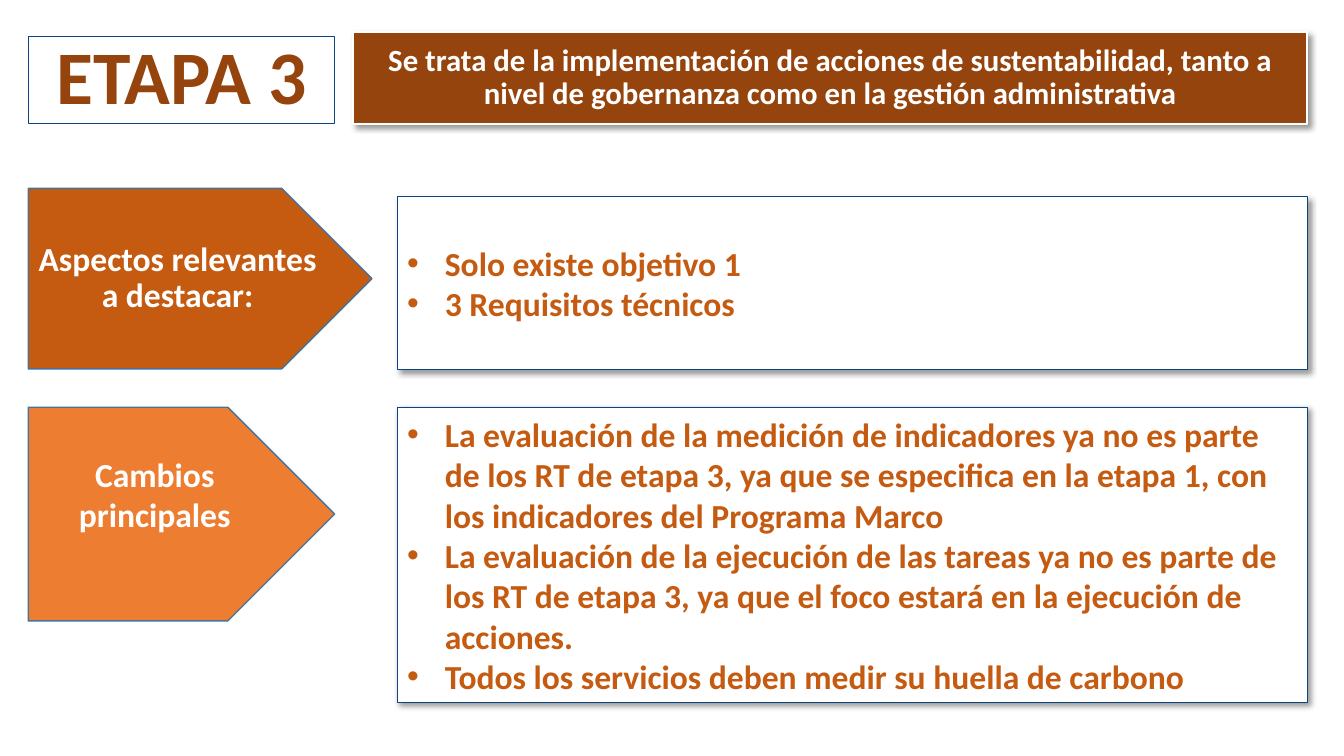
from lxml.etree import SubElement
from pptx import Presentation
from pptx.dml.color import RGBColor
from pptx.enum.shapes import MSO_SHAPE
from pptx.enum.text import MSO_ANCHOR, MSO_AUTO_SIZE, PP_ALIGN
from pptx.oxml.ns import qn
from pptx.util import Pt

WHITE = RGBColor(0xFF, 0xFF, 0xFF)
BROWN = RGBColor(0x95, 0x44, 0x0D)
RUST = RGBColor(0xC5, 0x5A, 0x11)
ORANGE = RGBColor(0xED, 0x7D, 0x31)
NAVY = RGBColor(0x0B, 0x45, 0x81)
STEEL = RGBColor(0x43, 0x73, 0x9E)

LEFT = 20.2
PANEL_LEFT, PANEL_WIDTH = 283.7, 650.2
INSETS = (7.2, 3.6, 7.2, 3.6)


class StageSlide:
    """Holds the text style and the slide, and draws each kind of element."""

    def __init__(self, prs):
        self.slide = prs.slides.add_slide(prs.slide_layouts[5])
        self.font = {"name": "Calibri", "bold": True}

    def decorate(self, s, fill, line, width, shadow=False):
        s.fill.solid()
        s.fill.fore_color.rgb = fill
        s.line.color.rgb = line
        s.line.width = Pt(width)
        s.shadow.inherit = False
        if shadow:
            effects = s._element.spPr.find(qn("a:effectLst"))
            outer = SubElement(effects, qn("a:outerShdw"), blurRad=str(Pt(4)),
                               dist=str(Pt(3)), dir="2700000", algn="tl", rotWithShape="0")
            color = SubElement(outer, qn("a:srgbClr"), val="000000")
            SubElement(color, qn("a:alpha"), val="40000")

    def add_text(self, s, lines, color, size, spacing=1.0, insets=INSETS, bullets=False):
        tf = s.text_frame
        frame = {"word_wrap": True, "auto_size": MSO_AUTO_SIZE.NONE,
                 "vertical_anchor": MSO_ANCHOR.MIDDLE}
        sides = ("margin_left", "margin_top", "margin_right", "margin_bottom")
        frame.update(zip(sides, map(Pt, insets)))
        for name, value in frame.items():
            setattr(tf, name, value)
        for i, line in enumerate(lines):
            p = tf.add_paragraph() if i else tf.paragraphs[0]
            p.alignment = PP_ALIGN.LEFT if bullets else PP_ALIGN.CENTER
            p.line_spacing = spacing
            if bullets:
                pPr = p._p.get_or_add_pPr()
                pPr.set("marL", str(Pt(27)))
                pPr.set("indent", str(-Pt(27)))
                SubElement(pPr, qn("a:buFont"), typeface="Arial")
                SubElement(pPr, qn("a:buChar"), char="•")
            r = p.add_run()
            r.text = line
            for name, value in {**self.font, "size": Pt(size)}.items():
                setattr(r.font, name, value)
            r.font.color.rgb = color

    def shape(self, kind, box):
        return self.slide.shapes.add_shape(kind, *map(Pt, box))

    def title(self, text, box):
        s = self.slide.shapes.title
        for name, value in zip(("left", "top", "width", "height"), box):
            setattr(s, name, Pt(value))
        self.decorate(s, WHITE, NAVY, 0.75)
        self.add_text(s, [text], BROWN, 54, 0.9, (7.9,) * 4)

    def banner(self, text, box):
        s = self.shape(MSO_SHAPE.RECTANGLE, box)
        self.decorate(s, BROWN, WHITE, 1.5, shadow=True)
        self.add_text(s, [text], WHITE, 22, 0.9, (2.2, 1.4, 2.2, 1.4))

    def arrow(self, text, box, fill, spacing=1.0, insets=INSETS):
        s = self.shape(MSO_SHAPE.PENTAGON, box)
        self.decorate(s, fill, STEEL, 1)
        self.add_text(s, [text], WHITE, 24, spacing, insets)

    def panel(self, items, top, height):
        s = self.shape(MSO_SHAPE.RECTANGLE, (PANEL_LEFT, top, PANEL_WIDTH, height))
        self.decorate(s, WHITE, NAVY, 0.75, shadow=True)
        self.add_text(s, items, RUST, 24, bullets=True)


def main():
    prs = Presentation()
    prs.slide_width, prs.slide_height = Pt(960), Pt(540)
    stage = StageSlide(prs)
    stage.title("ETAPA 3", (LEFT, 25.9, 218.9, 62.6))
    stage.banner("Se trata de la implementación de acciones de sustentabilidad, tanto a "
                 "nivel de gobernanza como en la gestión administrativa",
                 (252, 23, 681.9, 65.5))
    stage.arrow("Aspectos relevantes a destacar:", (LEFT, 134.6, 245.5, 128.9), RUST, 0.9)
    stage.panel(["Solo existe objetivo 1", "3 Requisitos técnicos"], 140.4, 123.8)
    stage.arrow("Cambios principales", (LEFT, 290.9, 218.9, 152.6), ORANGE,
                insets=(7.2, 3.6, 7.2, 32.4))
    stage.panel([
        "La evaluación de la medición de indicadores ya no es parte de los RT de etapa 3, "
        "ya que se especifica en la etapa 1, con los indicadores del Programa Marco",
        "La evaluación de la ejecución de las tareas ya no es parte de los RT de etapa 3, "
        "ya que el foco estará en la ejecución de acciones.",
        "Todos los servicios deben medir su huella de carbono",
    ], 290.9, 211)
    prs.save("out.pptx")


if __name__ == "__main__":
    main()
